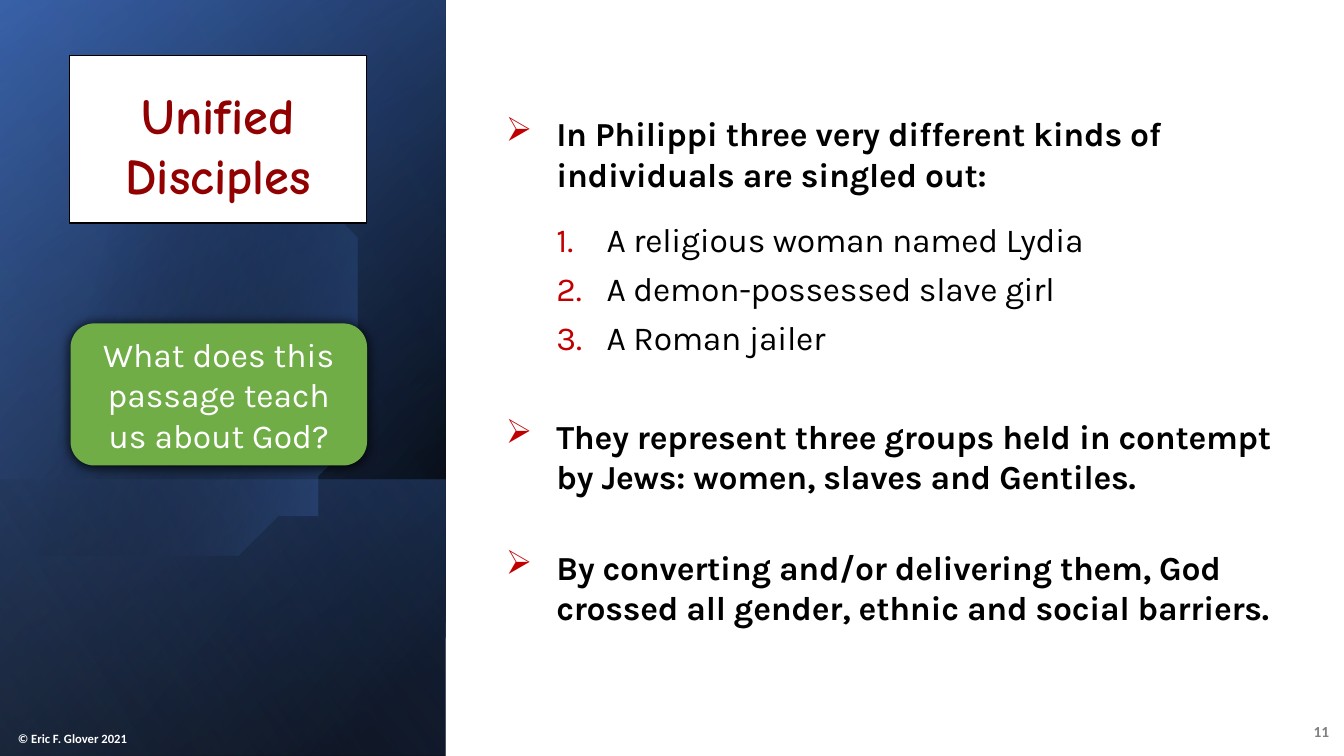
from lxml import etree
from pptx import Presentation
from pptx.dml.color import RGBColor
from pptx.enum.shapes import MSO_SHAPE
from pptx.enum.text import MSO_ANCHOR, MSO_AUTO_SIZE, PP_ALIGN
from pptx.oxml.ns import qn
from pptx.util import Cm, Pt

RECTANGLE, ROUNDED = MSO_SHAPE.RECTANGLE, MSO_SHAPE.ROUNDED_RECTANGLE
TOP, MIDDLE, BOTTOM = MSO_ANCHOR.TOP, MSO_ANCHOR.MIDDLE, MSO_ANCHOR.BOTTOM
LEFT, CENTER, RIGHT = PP_ALIGN.LEFT, PP_ALIGN.CENTER, PP_ALIGN.RIGHT
NO_FIT, GROW = MSO_AUTO_SIZE.NONE, MSO_AUTO_SIZE.SHAPE_TO_FIT_TEXT

COLORS = {
    "white": "FFFFFF", "black": "000000", "navy": "2F5597", "blue": "4472C4",
    "pale blue": "8FAADC", "green": "70AD47", "maroon": "910101",
    "marker red": "C00000", "gray": "808080",
}
SLIDE_WIDTH, SLIDE_HEIGHT = 33.87, 19.05
SIDEBAR_WIDTH = 11.23
LOWER_TOP = 12.09

# Start point, then control, control, end for each Bézier curve
DISC_START = (0, 4.09)
DISC_CURVES = [
    ((0.58, 3.61), (1.27, 3.25), (2.03, 3.02)),
    ((2.62, 2.87), (3.2, 2.79), (3.78, 2.79)),
    ((6.25, 2.84), (8.51, 4.5), (9.22, 6.99)),
    ((10.11, 10.08), (8.33, 13.28), (5.26, 14.17)),
    ((3.33, 14.73), (1.35, 14.25), (0, 13.1)),
]
# Text, level, space before, space after
POINTS = [
    ("In Philippi three very different kinds of individuals are singled out:", 0, 0, 18),
    ("A religious woman named Lydia", 1, 0, 6),
    ("A demon-possessed slave girl", 1, 0, 6),
    ("A Roman jailer", 1, 0, 30),
    ("They represent three groups held in contempt by Jews: women, slaves and Gentiles.",
     0, 12, 36),
    ("By converting and/or delivering them, God crossed all gender, ethnic and social barriers.",
     0, 0, 36),
]


def rgb(name):
    return RGBColor.from_string(COLORS[name])


def write(paragraph, text, font="Karla", size=24, color="black", bold=False,
          align=LEFT, before=0, after=0, spacing=None):
    paragraph.alignment = align
    paragraph.space_before, paragraph.space_after = Pt(before), Pt(after)
    run = paragraph.add_run()
    run.text = text
    run.font.name, run.font.size, run.font.bold = font, Pt(size), bold
    run.font.color.rgb = rgb(color)
    if spacing is not None:
        run.font._element.set("spc", str(spacing))


def mark(paragraph, level):
    """Give a paragraph an arrow bullet (level 0) or a number (level 1)."""
    paragraph.level = level
    properties = paragraph._p.get_or_add_pPr()
    properties.set("marL", str(Cm(1.27 * (level + 1))))
    properties.set("indent", str(Cm(-1.27)))
    color = etree.SubElement(properties, qn("a:buClr"))
    etree.SubElement(color, qn("a:srgbClr"), val=COLORS["marker red"])
    etree.SubElement(properties, qn("a:buFontTx"))
    if level:
        etree.SubElement(properties, qn("a:buAutoNum"), type="arabicPeriod")
    else:
        etree.SubElement(properties, qn("a:buChar"), char="➢")


def curve_points(start, curves, steps=16):
    for first, second, end in curves:
        for step in range(1, steps + 1):
            t = step / steps
            u = 1 - t
            yield tuple(u**3 * a + 3 * u * u * t * b + 3 * u * t * t * c + t**3 * d
                        for a, b, c, d in zip(start, first, second, end))
        start = end


class SlideBuilder:
    def __init__(self, presentation):
        self.slide = presentation.slides.add_slide(presentation.slide_layouts[1])
        self.shapes = self.slide.shapes
        self.slide.background.fill.solid()
        self.slide.background.fill.fore_color.rgb = rgb("white")

    def shade(self, shape, stops, angle):
        """Fill with two (position, color, opacity) stops; angle is clockwise."""
        shape.shadow.inherit = False
        shape.line.fill.background()
        shape.fill.gradient()
        shape.fill.gradient_angle = 360 - angle
        for stop, (position, color, _) in zip(shape.fill.gradient_stops, stops):
            stop.position = position / 100
            stop.color.rgb = rgb(color)
        colors = shape.element.spPr.iter(qn("a:srgbClr"))
        for color, (_, _, opacity) in zip(list(colors), stops):
            if opacity < 100:
                etree.SubElement(color, qn("a:alpha"), val=str(opacity * 1000))

    def panel(self, top, stops, angle):
        panel = self.shapes.add_shape(RECTANGLE, 0, Cm(top), Cm(SIDEBAR_WIDTH),
                                      Cm(SLIDE_HEIGHT - top))
        self.shade(panel, stops, angle)

    def disc(self, stops, angle):
        builder = self.shapes.build_freeform(*DISC_START, scale=Cm(1))
        builder.add_line_segments(list(curve_points(DISC_START, DISC_CURVES)), close=True)
        self.shade(builder.convert_to_shape(), stops, angle)

    def frame(self, shape, anchor, insets=(0.25, 0.13, 0.25, 0.13), fit=NO_FIT):
        frame = shape.text_frame
        frame.word_wrap, frame.auto_size, frame.vertical_anchor = True, fit, anchor
        (frame.margin_left, frame.margin_top,
         frame.margin_right, frame.margin_bottom) = map(Cm, insets)
        return frame

    def place(self, placeholder, box):
        """Position a placeholder and bring it to the front."""
        (placeholder.left, placeholder.top,
         placeholder.width, placeholder.height) = map(Cm, box)
        self.shapes._spTree.append(placeholder.element)

    def title(self, text, box):
        title = self.shapes.title
        self.place(title, box)
        outline = etree.SubElement(title.element.spPr, qn("a:prstGeom"), prst="roundRect")
        etree.SubElement(outline, qn("a:avLst"))
        title.fill.solid()
        title.fill.fore_color.rgb = rgb("white")
        title.line.color.rgb = rgb("black")
        title.line.width = Pt(0.75)
        frame = self.frame(title, MIDDLE, (0.25, 0.25, 0.25, 0))
        write(frame.paragraphs[0], text, font="Comic Neue", size=36, color="maroon",
              bold=True, align=CENTER, after=6)

    def points(self, points, box):
        body = self.slide.placeholders[1]
        self.place(body, box)
        frame = self.frame(body, TOP, fit=GROW)
        for index, (text, level, before, after) in enumerate(points):
            paragraph = frame.add_paragraph() if index else frame.paragraphs[0]
            write(paragraph, text, bold=level == 0, before=before, after=after, spacing=-20)
            mark(paragraph, level)

    def question(self, text, box):
        card = self.shapes.add_shape(ROUNDED, *map(Cm, box))
        card.fill.solid()
        card.fill.fore_color.rgb = rgb("green")
        card.line.fill.background()
        card.shadow.inherit = False
        effects = card.element.spPr.find(qn("a:effectLst"))
        shadow = etree.SubElement(effects, qn("a:outerShdw"), blurRad=str(Pt(8.5)),
                                  dist=str(Pt(1)), dir="5400000", rotWithShape="0")
        etree.SubElement(shadow, qn("a:srgbClr"), val=COLORS["black"])
        frame = self.frame(card, MIDDLE, (0.25, 0, 0.25, 0))
        write(frame.paragraphs[0], text, color="white", align=CENTER)

    def label(self, text, box, anchor, **style):
        label = self.shapes.add_textbox(*map(Cm, box))
        frame = self.frame(label, anchor)
        write(frame.paragraphs[0], text, font="Calibri", bold=True, **style)


def main():
    presentation = Presentation()
    presentation.slide_width, presentation.slide_height = Cm(SLIDE_WIDTH), Cm(SLIDE_HEIGHT)
    page = SlideBuilder(presentation)
    page.panel(0, [(8, "black", 100), (100, "navy", 100)], 220)
    page.panel(0, [(0, "black", 0), (99, "blue", 46)], 240)
    page.panel(LOWER_TOP, [(2, "blue", 29), (100, "black", 30)], 140)
    page.disc([(29, "black", 0), (100, "blue", 43)], 14)
    page.panel(0, [(0, "black", 0), (99, "pale blue", 11)], 150)
    page.label("11", (32.51, 17.93, 1.24, 1.02), MIDDLE,
               size=11, color="gray", align=RIGHT, after=6)
    page.title("Unified Disciples", (1.75, 1.4, 7.49, 4.22))
    page.label("© Eric F. Glover 2021", (0.2, 18.21, 3.99, 0.71), BOTTOM,
               size=9, color="white")
    page.points(POINTS, (12.5, 2.72, 20.07, 13.34))
    page.question("What does this passage teach us about God?", (1.78, 8.15, 7.47, 3.58))
    presentation.save("out.pptx")


if __name__ == "__main__":
    main()
